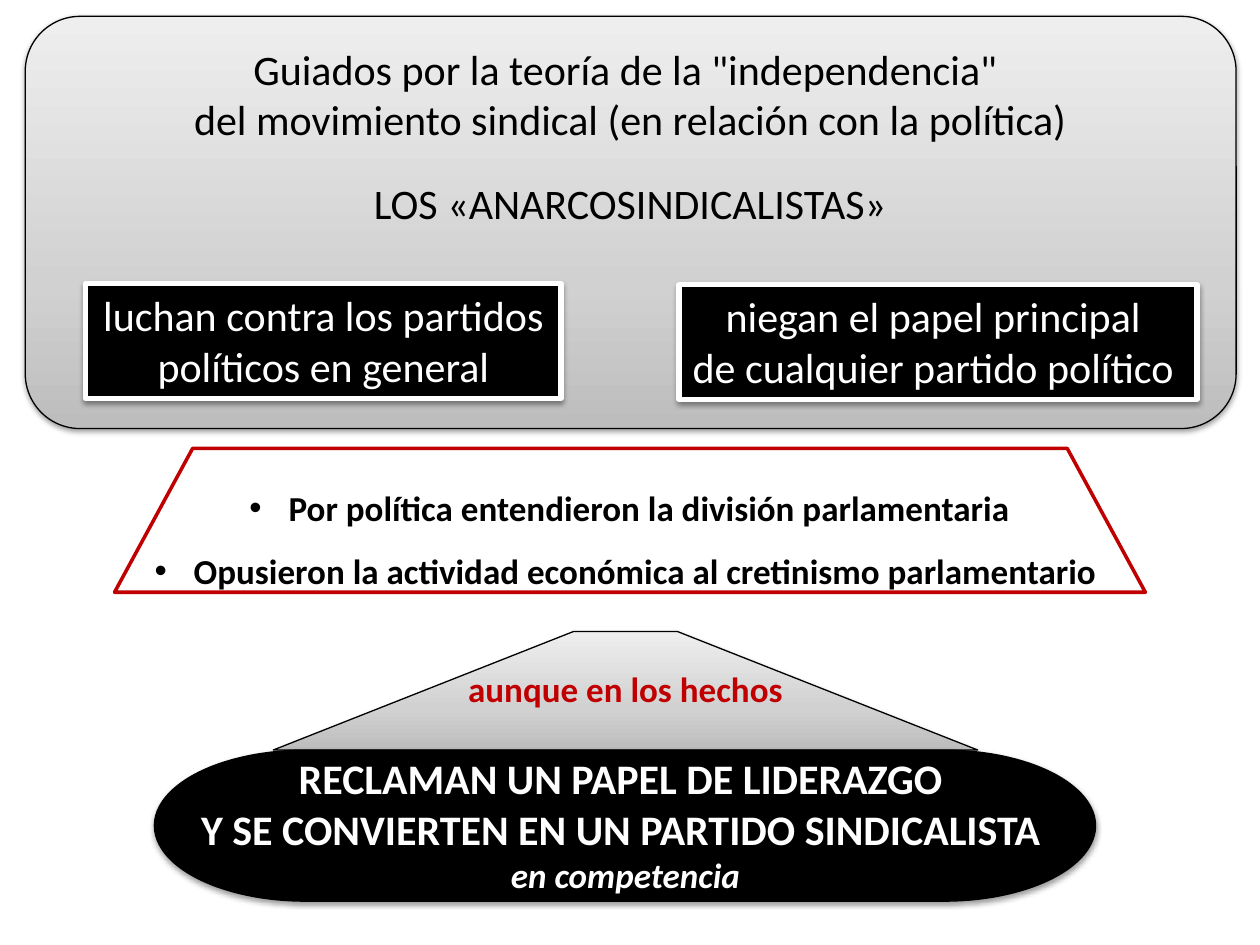
from copy import deepcopy

from lxml import etree
from pptx import Presentation
from pptx import util as u
from pptx.dml.color import RGBColor
from pptx.enum import shapes, text
from pptx.oxml.ns import qn

COLOURS = {
    "black": "000000",
    "white": "FFFFFF",
    "red": "C00000",
    "grey_dark": "BDBDBD",
    "grey_mid": "D1D1D1",
    "grey_light": "EEEEEE",
}
GREY_STOPS = [(0, "grey_dark"), (0.35, "grey_mid"), (1, "grey_light")]


def colour(name):
    """Return the named colour."""
    return RGBColor.from_string(COLOURS[name])


class SlideBuilder:
    """Hold the style and the current slide."""

    font = "Calibri"

    def __init__(self, page):
        """Keep the slide to draw on."""
        self.page = page

    def shape(self, kind, place, fill=None, line=None, width=0.75, adjust=None, shadow=True):
        """Add a preset shape; without a fill colour it gets the grey gradient."""
        box = self.page.shapes.add_shape(kind, *map(u.Cm, place))
        if adjust is not None:
            box.adjustments[0] = adjust
        if fill:
            box.fill.solid()
            box.fill.fore_color.rgb = colour(fill)
        else:
            self.gradient(box)
        if line:
            box.line.color.rgb = colour(line)
            box.line.width = u.Pt(width)
        else:
            box.line.fill.background()
        box.shadow.inherit = False
        if shadow:
            self.cast_shadow(box)
        return box

    def gradient(self, box):
        """Fill a shape with the grey stops, dark at the bottom."""
        box.fill.gradient()
        box.fill.gradient_angle = 90
        stops = box.element.spPr.find(".//" + qn("a:gsLst"))
        stops.append(deepcopy(stops[-1]))
        for stop, (position, name) in zip(box.fill.gradient_stops, GREY_STOPS):
            stop.position = position
            stop.color.rgb = colour(name)

    def cast_shadow(self, box):
        """Give a shape a soft shadow below."""
        effects = box.element.spPr.find(qn("a:effectLst"))
        outer = etree.SubElement(
            effects, qn("a:outerShdw"), blurRad=str(u.Pt(3.1)), dist=str(u.Pt(1.6)),
            dir="5400000", rotWithShape="0")
        tint = etree.SubElement(outer, qn("a:srgbClr"), val=COLOURS["black"])
        etree.SubElement(tint, qn("a:alpha"), val="38000")

    def placeholder(self, box, place, lines):
        """Move a placeholder to the front and fill it."""
        box.left, box.top, box.width, box.height = map(u.Cm, place)
        box.element.getparent().append(box.element)
        return self.set_lines(box, lines)

    def textbox(self, place, lines):
        """Add a wrapped text box."""
        return self.set_lines(self.page.shapes.add_textbox(*map(u.Cm, place)), lines)

    def set_lines(self, box, lines):
        """Set centred lines, each a text with its own style."""
        frame = box.text_frame
        frame.word_wrap = True
        frame.auto_size = text.MSO_AUTO_SIZE.NONE
        frame.vertical_anchor = text.MSO_ANCHOR.TOP
        for number, (words, style) in enumerate(lines):
            para = frame.add_paragraph() if number else frame.paragraphs[0]
            para.text = words
            para.alignment = text.PP_ALIGN.CENTER
            para.space_before = u.Pt(style.get("gap", 0))
            para.line_spacing = style.get("spacing", 1.0)
            para.font.name = self.font
            para.font.size = u.Pt(style.get("size", 24))
            para.font.bold = style.get("bold", False)
            para.font.italic = style.get("italic", False)
            para.font.color.rgb = colour(style.get("color", "black"))
        return box

    def bullets(self, box, place, lines):
        """Fill the body placeholder with hanging bullets."""
        self.placeholder(box, place, lines)
        indent = u.Cm(0.79)
        for para in box.text_frame.paragraphs:
            properties = para._p.get_or_add_pPr()
            properties.set("marL", str(indent))
            properties.set("indent", str(-indent))


def main():
    """Build the slide and save it."""
    deck = Presentation()
    deck.slide_width, deck.slide_height = u.Cm(25.4), u.Cm(19.05)
    page = deck.slides.add_slide(deck.slide_layouts[1])
    title, body = page.placeholders
    build = SlideBuilder(page)
    kinds = shapes.MSO_SHAPE

    build.shape(kinds.ROUNDED_RECTANGLE, (0.51, 0.33, 24.41, 8.31), line="black", adjust=0.133)
    build.shape(kinds.TRAPEZOID, (5.51, 12.73, 14.2, 2.39), line="black", adjust=2.534)
    build.shape(kinds.FLOWCHART_TERMINATOR, (3.1, 15.11, 19, 3.07), fill="black")
    build.shape(kinds.TRAPEZOID, (2.31, 9.04, 20.78, 2.9), fill="white", line="red",
                width=2, adjust=0.543, shadow=False)

    build.placeholder(title, (1.3, 0.74, 22.81, 4.01), [
        ('Guiados por la teoría de la "independencia" ', {}),
        ("del movimiento sindical (en relación con la política)", {}),
        ("LOS «ANARCOSINDICALISTAS»", {"gap": 19.5}),
    ])
    point = {"size": 20, "bold": True, "spacing": 1.5}
    build.bullets(body, (2.49, 9.25, 20.4, 2.69), [
        ("Por política entendieron la división parlamentaria", point),
        ("Opusieron la actividad económica al cretinismo parlamentario ", point),
    ])

    white = {"color": "white"}
    claims = [
        ((1.73, 5.72, 9.58, 2.31), ["luchan contra los partidos políticos en general"]),
        ((13.69, 5.74, 10.44, 2.31),
         ["niegan el papel principal ", "de cualquier partido político "]),
    ]
    for place, lines in claims:
        box = build.shape(kinds.RECTANGLE, place, fill="black", line="white", width=3)
        build.set_lines(box, [(words, white) for words in lines])

    strong = {"color": "white", "bold": True}
    build.textbox((2.31, 13.34, 20.6, 4.88), [
        ("aunque en los hechos", {"size": 20, "bold": True, "color": "red"}),
        ("RECLAMAN UN PAPEL DE LIDERAZGO ", {**strong, "gap": 24.4}),
        ("Y SE CONVIERTEN EN UN PARTIDO SINDICALISTA ", strong),
        ("en competencia", {**strong, "size": 20, "italic": True}),
    ])
    deck.save("out.pptx")


if __name__ == "__main__":
    main()
